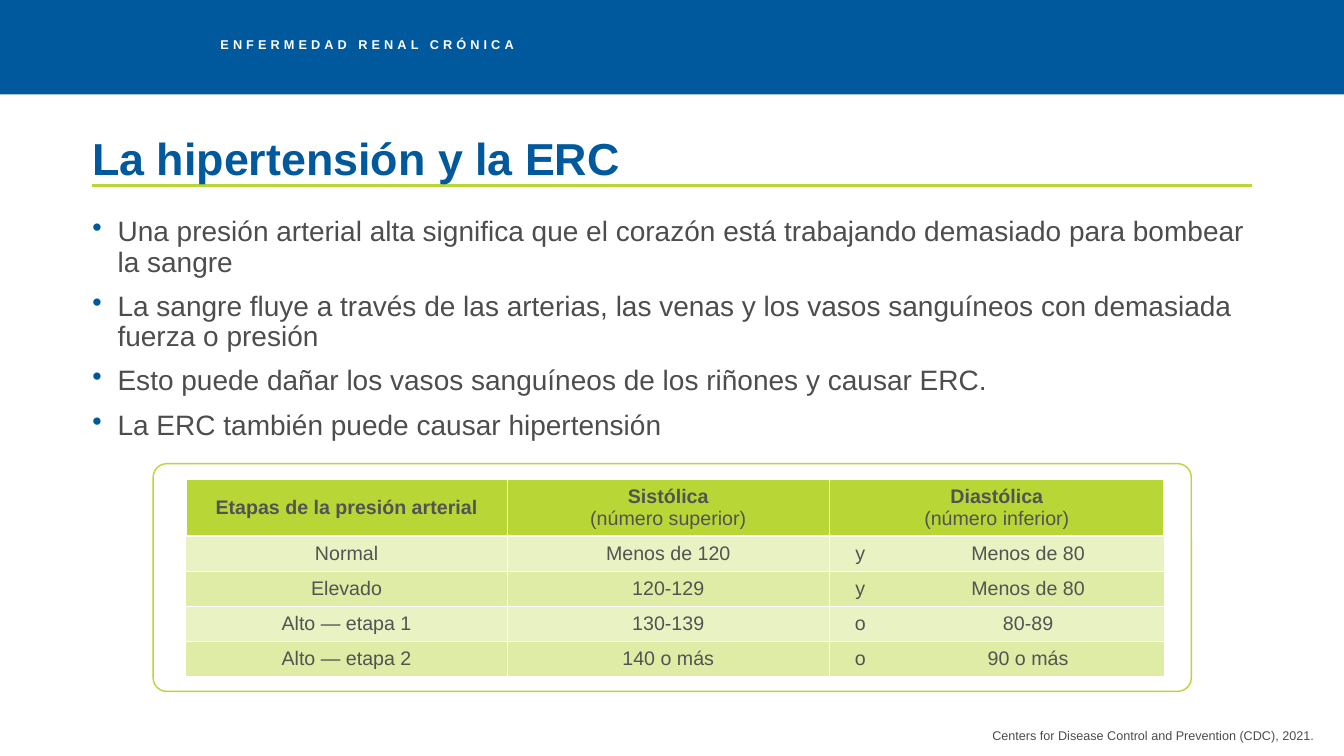
from dataclasses import dataclass
from lxml import etree
from pptx import Presentation
from pptx.dml.color import RGBColor
from pptx.enum import shapes, text
from pptx.oxml import ns
from pptx.util import Pt


@dataclass(frozen=True)
class Theme:
    font: str = "Arial"
    blue: str = "00599C"
    lime: str = "B8D636"
    pale: str = "E9F2C3"
    soft: str = "DEECA5"
    white: str = "FFFFFF"
    ink: str = "4D4D4F"
    gray: str = "535353"
    kicker: float = 9.1
    title: float = 32
    body: float = 20
    cell: float = 14
    note: float = 9


T = Theme()
AL = text.PP_ALIGN
MID = text.MSO_ANCHOR.MIDDLE
POINTS = [
    "Una presión arterial alta significa que el corazón está trabajando demasiado para bombear la sangre",
    "La sangre fluye a través de las arterias, las venas y los vasos sanguíneos con demasiada fuerza o presión",
    "Esto puede dañar los vasos sanguíneos de los riñones y causar ERC.",
    "La ERC también puede causar hipertensión",
]
HEADS = [
    ("Etapas de la presión arterial", ""),
    ("Sistólica", "(número superior)"),
    ("Diastólica", "(número inferior)"),
]
STAGES = [
    ("Normal", "Menos de 120", "y", "Menos de 80"),
    ("Elevado", "120-129", "y", "Menos de 80"),
    ("Alto — etapa 1", "130-139", "o", "80-89"),
    ("Alto — etapa 2", "140 o más", "o", "90 o más"),
]


def color(code):
    return RGBColor.from_string(code)


def paint(part, code):
    part.fill.solid()
    part.fill.fore_color.rgb = color(code)


def style(par, size, code, bold=None):
    font = par.font
    font.name, font.size, font.bold = T.font, Pt(size), bold
    font.color.rgb = color(code)


def frame(slide, box, pad=0):
    tf = slide.shapes.add_textbox(*map(Pt, box)).text_frame
    tf.word_wrap = True
    tf.margin_left = tf.margin_right = tf.margin_top = tf.margin_bottom = Pt(pad)
    return tf


def panel(slide, kind, box, fill, line=None):
    shape = slide.shapes.add_shape(kind, *map(Pt, box))
    shape.shadow.inherit = False
    paint(shape, fill)
    if line:
        shape.line.color.rgb = color(line)
        shape.line.width = Pt(1)
    else:
        shape.line.fill.background()
    return shape


def banner(slide, box):
    x, y, w, h = box
    panel(slide, shapes.MSO_SHAPE.RECTANGLE, box, T.blue)
    par = frame(slide, (x + 157.5, y + 27.2, 223, 17)).paragraphs[0]
    run = par.add_run()
    run.text = "ENFERMEDAD RENAL CRÓNICA"
    run._r.get_or_add_rPr().set("spc", "290")
    par.line_spacing = 0.9
    style(par, T.kicker, T.white, True)


def heading(slide, box):
    x, y, w, h = box
    rule = slide.shapes.add_connector(
        shapes.MSO_CONNECTOR.STRAIGHT, *map(Pt, (x, y + h, x + w, y + h)))
    rule.line.color.rgb = color(T.lime)
    rule.line.width = Pt(2)
    etree.SubElement(rule._element.spPr, ns.qn("a:effectLst"))
    tf = frame(slide, box)
    tf.vertical_anchor = text.MSO_ANCHOR.BOTTOM
    par = tf.paragraphs[0]
    par.text = "La hipertensión y la ERC"
    par.line_spacing = 0.9
    style(par, T.title, T.blue, True)


def bullets(slide, box):
    tf = frame(slide, box)
    for i, line in enumerate(POINTS):
        par = tf.add_paragraph() if i else tf.paragraphs[0]
        par.text = line
        par.line_spacing = 0.9
        if i:
            par.space_before = Pt(10)
        prop = par._p.get_or_add_pPr()
        prop.set("marL", str(Pt(18)))
        prop.set("indent", str(Pt(-18)))
        tint = etree.SubElement(prop, ns.qn("a:buClr"))
        etree.SubElement(tint, ns.qn("a:srgbClr"), val=T.blue)
        etree.SubElement(prop, ns.qn("a:buChar"), char="•")
        style(par, T.body, T.ink)


def edges(cell, widths):
    prop = cell._tc.get_or_add_tcPr()
    for side, width in zip("LRTB", widths):
        line = etree.SubElement(prop, ns.qn("a:ln" + side), w=str(Pt(width)))
        if width:
            fill = etree.SubElement(line, ns.qn("a:solidFill"))
            etree.SubElement(fill, ns.qn("a:srgbClr"), val=T.white)
        else:
            etree.SubElement(line, ns.qn("a:noFill"))


def fit(cell, fill, widths):
    edges(cell, widths)
    paint(cell, fill)
    cell.vertical_anchor = MID
    cell.margin_left = cell.margin_right = Pt(3.6)
    cell.margin_top = cell.margin_bottom = Pt(3.6)
    par = cell.text_frame.paragraphs[0]
    par.alignment = AL.CENTER
    style(par, T.cell, T.gray)
    return par


def stages(slide, box):
    x, y, w, h = box
    card = panel(slide, shapes.MSO_SHAPE.ROUNDED_RECTANGLE, box, T.white, T.lime)
    card.adjustments[0] = 0.06
    cols = (229.8, 229.8, 44.6, 195.1)
    rows = (40.4,) + (25,) * len(STAGES)
    area = (x + 23.3, y + 11, sum(cols), sum(rows))
    grid = slide.shapes.add_table(len(rows), len(cols), *map(Pt, area)).table
    grid.first_row = grid.horz_banding = False
    for col, width in zip(grid.columns, cols):
        col.width = Pt(width)
    for row, height in zip(grid.rows, rows):
        row.height = Pt(height)
    grid.cell(0, 2).merge(grid.cell(0, 3))
    for c, (name, sub) in enumerate(HEADS):
        par = fit(grid.cell(0, c), T.lime, (1 if c else 2, 2 if c == 2 else 1, 2, 2))
        run = par.add_run()
        run.text, run.font.bold = name, True
        if sub:
            par.add_line_break()
            par.add_run().text = sub
    for r, stage in enumerate(STAGES, 1):
        for c, value in enumerate(stage):
            widths = (int(c != 3), int(c != 2), 2 if r == 1 else 1, 1)
            par = fit(grid.cell(r, c), T.pale if r % 2 else T.soft, widths)
            par.add_run().text = value


def source(slide, box):
    par = frame(slide, box, 3.6).paragraphs[0]
    par.text = "Centers for Disease Control and Prevention (CDC), 2021."
    par.alignment = AL.RIGHT
    style(par, T.note, T.ink)


def main():
    deck = Presentation()
    deck.slide_width, deck.slide_height = Pt(960), Pt(540)
    slide = deck.slides.add_slide(deck.slide_layouts[6])
    banner(slide, (0, 0, 960, 67.5))
    heading(slide, (66, 81.4, 828, 51))
    bullets(slide, (66, 155.5, 828, 174))
    source(slide, (615, 516.2, 327, 18))
    stages(slide, (109.4, 331.2, 741.6, 162.7))
    deck.save("out.pptx")


if __name__ == "__main__":
    main()
